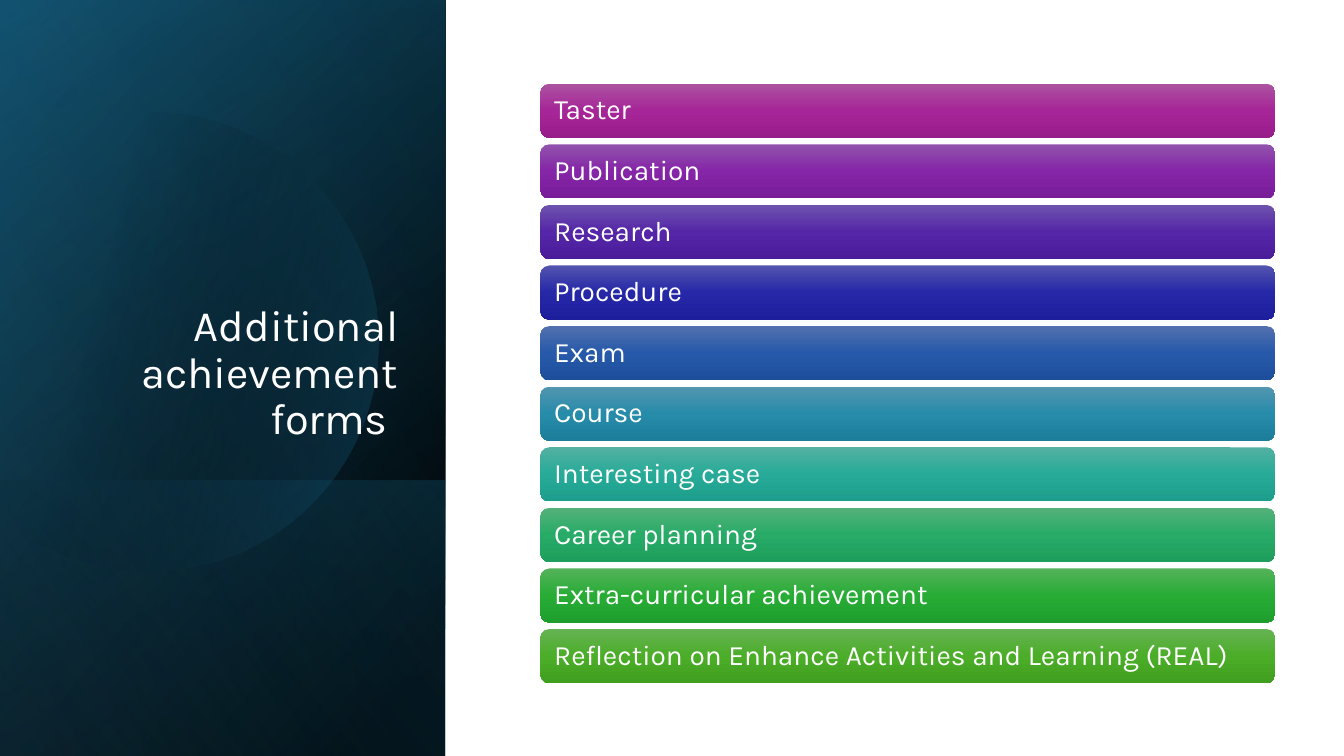
import math

import pptx
import pptx.dml.color
import pptx.enum.shapes
import pptx.enum.text
import pptx.oxml
import pptx.oxml.ns
import pptx.util

Pt = pptx.util.Pt
RGBColor = pptx.dml.color.RGBColor
Shapes = pptx.enum.shapes.MSO_SHAPE
Align = pptx.enum.text.PP_ALIGN
Anchor = pptx.enum.text.MSO_ANCHOR

WHITE = RGBColor(0xFF, 0xFF, 0xFF)
BLACK = RGBColor(0x00, 0x00, 0x00)
NAVY = RGBColor(0x10, 0x48, 0x62)
TEAL = RGBColor(0x15, 0x60, 0x82)
SKY = RGBColor(0x46, 0xB1, 0xE1)

FORMS = [
    ("Taster", RGBColor(0xAC, 0x53, 0xA0), RGBColor(0xA6, 0x25, 0x98), RGBColor(0x99, 0x1C, 0x8B)),
    ("Publication", RGBColor(0x91, 0x53, 0xAD), RGBColor(0x85, 0x25, 0xA7), RGBColor(0x78, 0x1C, 0x99)),
    ("Research", RGBColor(0x6D, 0x53, 0xAE), RGBColor(0x55, 0x26, 0xA7), RGBColor(0x4A, 0x1C, 0x9A)),
    ("Procedure", RGBColor(0x53, 0x54, 0xAE), RGBColor(0x26, 0x28, 0xA8), RGBColor(0x1D, 0x1E, 0x9B)),
    ("Exam", RGBColor(0x53, 0x70, 0xAF), RGBColor(0x26, 0x59, 0xA9), RGBColor(0x1D, 0x4E, 0x9C)),
    ("Course", RGBColor(0x53, 0x96, 0xB0), RGBColor(0x27, 0x8B, 0xAA), RGBColor(0x1D, 0x7E, 0x9C)),
    ("Interesting case", RGBColor(0x53, 0xB0, 0xA1), RGBColor(0x27, 0xAB, 0x98), RGBColor(0x1D, 0x9D, 0x8B)),
    ("Career planning", RGBColor(0x54, 0xB1, 0x7A), RGBColor(0x27, 0xAB, 0x67), RGBColor(0x1E, 0x9E, 0x5C)),
    ("Extra-curricular achievement", RGBColor(0x54, 0xB2, 0x5A), RGBColor(0x28, 0xAC, 0x36),
     RGBColor(0x1E, 0x9E, 0x2C)),
    ("Reflection on Enhance Activities and Learning (REAL)", RGBColor(0x66, 0xB3, 0x54),
     RGBColor(0x4B, 0xAD, 0x28), RGBColor(0x40, 0x9F, 0x1E)),
]


def set_attributes(target, values):
    """Set each named attribute of the target."""
    for name, value in values.items():
        setattr(target, name, value)


def paint_gradient(shape, stops, angle):
    """Give a shape a linear gradient of (position, colour, opacity) stops and no line."""
    shape.shadow.inherit = False
    shape.line.fill.background()
    shape.fill.background()
    stop_xml = "".join(
        f'<a:gs pos="{position * 1000}"><a:srgbClr val="{colour}">'
        f'<a:alpha val="{opacity * 1000}"/></a:srgbClr></a:gs>'
        for position, colour, opacity in stops
    )
    gradient = pptx.oxml.parse_xml(
        f'<a:gradFill {pptx.oxml.ns.nsdecls("a")} rotWithShape="1"><a:gsLst>{stop_xml}</a:gsLst>'
        f'<a:lin ang="{angle * 60000}" scaled="0"/></a:gradFill>'
    )
    properties = shape._element.spPr
    properties.replace(properties.find(pptx.oxml.ns.qn("a:noFill")), gradient)


def format_text(shape, text, frame_values, paragraph_values, size):
    """Write one white paragraph into a shape."""
    frame = shape.text_frame
    frame.text = text
    set_attributes(frame, {"word_wrap": True, **frame_values})
    paragraph = frame.paragraphs[0]
    set_attributes(paragraph, {"line_spacing": 0.9, **paragraph_values})
    font = paragraph.runs[0].font
    set_attributes(font, {"name": "Karla", "size": Pt(size)})
    font.color.rgb = WHITE


def add_turned_panel(slide, box, stops, angle):
    """Fill a box with a mirrored rectangle turned by a quarter."""
    left, top, width, height = box
    shape = slide.shapes.add_shape(
        Shapes.RECTANGLE, Pt(left + (width - height) / 2), Pt(top + (height - width) / 2),
        Pt(height), Pt(width))
    shape.rotation = 90
    shape._element.spPr.xfrm.set("flipH", "1")
    paint_gradient(shape, stops, angle)


def add_disc(slide, box):
    """Draw the translucent disc cut off at the left edge of the box."""
    left, top, width, height = box
    centre_x, centre_y, radius = left + width * 0.335, top + height * 0.452, width * 0.516
    limit = math.acos((left - centre_x) / radius)
    steps = 90
    angles = [limit * (2 * step / steps - 1) for step in range(steps + 1)]
    points = [(Pt(centre_x + radius * math.cos(angle)), Pt(centre_y + radius * math.sin(angle)))
              for angle in angles]
    builder = slide.shapes.build_freeform(*points[0])
    builder.add_line_segments(points[1:], close=True)
    paint_gradient(builder.convert_to_shape(), [(29, BLACK, 0), (100, TEAL, 43)], 14)


def add_title_panel(slide, box):
    """Build the dark side panel with the slide title."""
    left, top, width, height = box
    strip_height = 197
    strip = (left, top + height - strip_height, width, strip_height)
    add_turned_panel(slide, box, [(8, BLACK, 100), (100, NAVY, 100)], 50)
    add_turned_panel(slide, box, [(0, BLACK, 0), (99, TEAL, 46)], 30)
    add_turned_panel(slide, strip, [(2, TEAL, 29), (100, BLACK, 30)], 130)
    add_disc(slide, box)
    add_turned_panel(slide, box, [(0, BLACK, 0), (99, SKY, 11)], 120)
    title = slide.shapes.title
    set_attributes(title, {"left": Pt(left + 46), "top": Pt(top + 132.5),
                           "width": Pt(245.5), "height": Pt(188.5)})
    format_text(title, "Additional achievement forms ",
                {"vertical_anchor": Anchor.BOTTOM, "auto_size": pptx.enum.text.MSO_AUTO_SIZE.NONE},
                {"alignment": Align.RIGHT}, 31)
    slide.shapes._spTree.append(title._element)


def add_form_list(slide, box):
    """Stack one coloured bar per achievement form in the box."""
    left, top, width, height = box
    bar_height = 38.7
    pitch = (height - bar_height) / (len(FORMS) - 1)
    for index, (text, *colours) in enumerate(FORMS):
        bar = slide.shapes.add_shape(Shapes.ROUNDED_RECTANGLE, Pt(left), Pt(top + index * pitch),
                                     Pt(width), Pt(bar_height))
        paint_gradient(bar, [(stop, colour, 100) for stop, colour in zip((0, 50, 100), colours)], 90)
        format_text(bar, text,
                    {"vertical_anchor": Anchor.MIDDLE, "margin_left": Pt(7.9), "margin_right": Pt(7.9),
                     "margin_top": Pt(6), "margin_bottom": Pt(6)},
                    {"alignment": Align.LEFT}, 20)


def main():
    """Build and save the presentation."""
    presentation = pptx.Presentation()
    set_attributes(presentation, {"slide_width": Pt(960), "slide_height": Pt(540)})
    slide = presentation.slides.add_slide(presentation.slide_layouts[5])
    add_title_panel(slide, (0, 0, 318, 540))
    add_form_list(slide, (386, 59.8, 525, 428.2))
    presentation.save("out.pptx")


if __name__ == "__main__":
    main()
